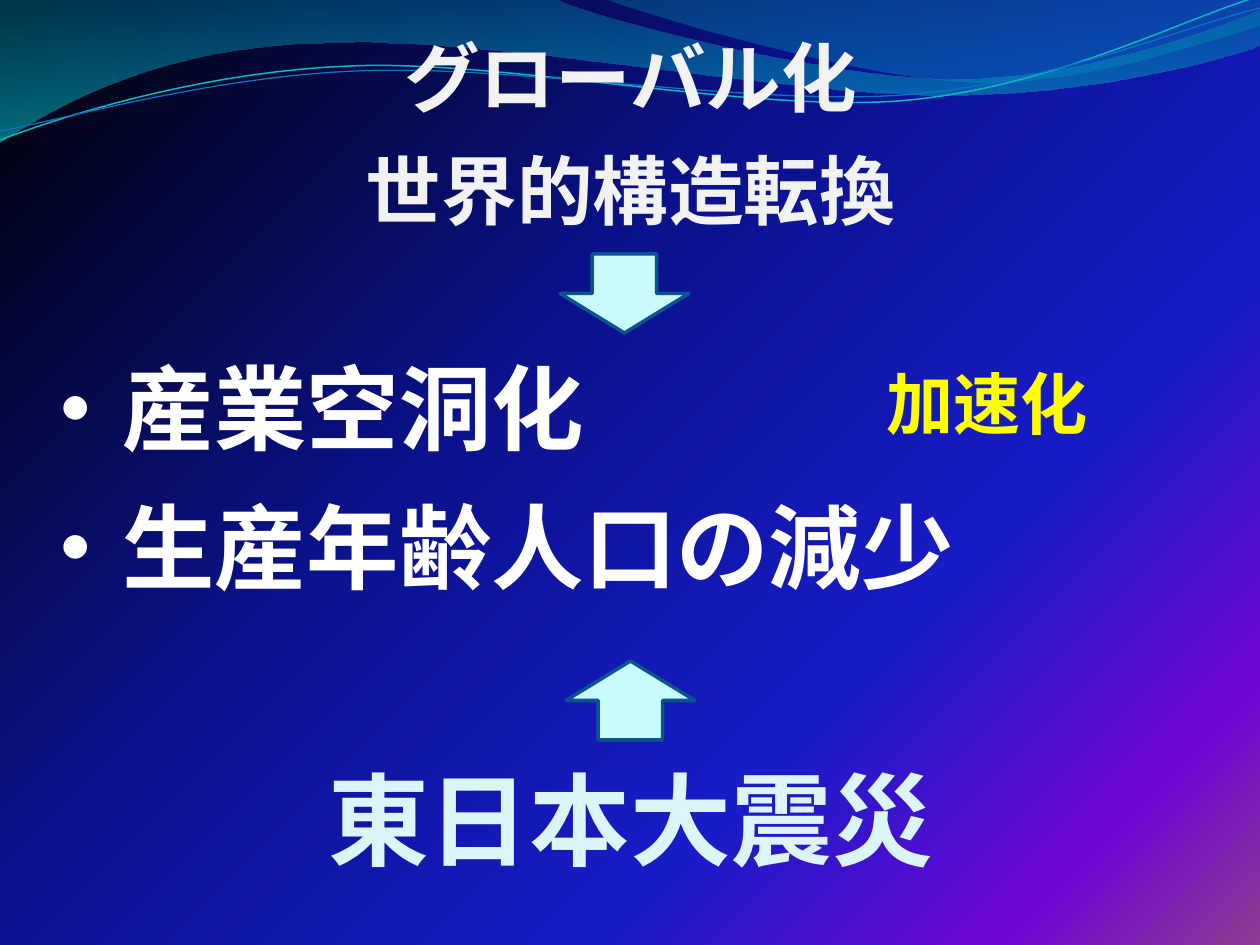
import dataclasses

import pptx
import pptx.dml.color
import pptx.enum.shapes
import pptx.enum.text
import pptx.oxml
import pptx.oxml.ns
import pptx.util
from lxml import etree

SHAPE = pptx.enum.shapes.MSO_SHAPE
ALIGN = pptx.enum.text.PP_ALIGN


@dataclasses.dataclass(frozen=True)
class Theme:
    font: str = "Noto Sans CJK JP"
    title: tuple = (54, "F2F2F2")
    body: tuple = (66, "FFFFFF")
    accent: tuple = (48, "FFFF00")
    footer: tuple = (72, "DBF5F9")
    arrow_fill: str = "C9FAFC"
    arrow_line: str = "0B5292"
    # Gradient stops: position %, colour, opacity %
    background: tuple = ((0, "000000", 100), (40, "0A128C", 100), (70, "181CC7", 100),
                         (88, "7005D4", 100), (100, "8C3D91", 100))
    wide_wave: tuple = ((0, "0074A1", 45), (100, "00C6CF", 55))
    right_wave: tuple = ((0, "00A1A9", 30), (80, "008BBF", 45))
    teal_line: str = "0AB8BF"
    blue_line: str = "0F6FC6"


def px(n):
    return round(n * 914400 / 126)


def rgb(value):
    return pptx.dml.color.RGBColor.from_string(value)


def set_gradient(fill, stops, angle):
    """Give a fill any number of stops, with opacity; the angle runs clockwise."""
    fill.gradient()
    fill.gradient_angle = (360 - angle) % 360
    gs_list = fill.gradient_stops._gsLst
    for gs in list(gs_list):
        gs_list.remove(gs)
    for pos, color, opacity in stops:
        gs = etree.SubElement(gs_list, pptx.oxml.ns.qn("a:gs"), pos=str(pos * 1000))
        clr = etree.SubElement(gs, pptx.oxml.ns.qn("a:srgbClr"), val=color)
        if opacity < 100:
            etree.SubElement(clr, pptx.oxml.ns.qn("a:alpha"), val=str(opacity * 1000))


def bend(sp, segments):
    """Join each run of three straight steps into one cubic curve."""
    steps = iter(list(sp._element.iter(pptx.oxml.ns.qn("a:lnTo"))))
    for seg in segments:
        first, *rest = [next(steps) for _ in seg]
        if rest:
            first.tag = pptx.oxml.ns.qn("a:cubicBezTo")
            for step in rest:
                first.append(step[0])
                step.getparent().remove(step)


class Deck:
    def __init__(self, theme):
        self.theme = theme
        self.prs = pptx.Presentation()
        self.prs.slide_width, self.prs.slide_height = px(1260), px(945)
        self.s = self.prs.slides.add_slide(self.prs.slide_layouts[1])
        set_gradient(self.s.background.fill, theme.background, 45)

    def wave(self, start, segments, stops=None, line=None, width=1):
        """Draw a filled band or an open line and keep it on the layout."""
        fb = self.s.shapes.build_freeform(*start, scale=px(100) / 100)
        fb.add_line_segments([pt for seg in segments for pt in seg],
                             close=stops is not None)
        sp = fb.convert_to_shape()
        bend(sp, segments)
        sp.shadow.inherit = False
        if stops:
            set_gradient(sp.fill, stops, 90)
            sp.line.fill.background()
        else:
            sp.fill.background()
            sp.line.color.rgb = rgb(line)
            sp.line.width = pptx.util.Pt(width)
        self.s.slide_layout.shapes._spTree.append(sp._element)

    def text(self, box, lines, style, align=ALIGN.CENTER, sp=None):
        """Fill a placeholder, or a new text box when none is given."""
        box = [px(n) for n in box]
        if sp is None:
            sp = self.s.shapes.add_textbox(*box)
        sp.left, sp.top, sp.width, sp.height = box
        tf = sp.text_frame
        tf.word_wrap = True
        tf.auto_size = pptx.enum.text.MSO_AUTO_SIZE.NONE
        tf.vertical_anchor = pptx.enum.text.MSO_ANCHOR.BOTTOM
        size, color = style
        for i, line in enumerate(lines):
            p = tf.add_paragraph() if i else tf.paragraphs[0]
            p.alignment = align
            p.space_before = pptx.util.Pt(0)
            pPr = p._p.get_or_add_pPr()
            pPr.set("marL", "0")
            pPr.set("indent", "0")
            etree.SubElement(pPr, pptx.oxml.ns.qn("a:buNone"))
            r = p.add_run()
            r.text = line
            r.font.name = self.theme.font
            r.font.size = pptx.util.Pt(size)
            r.font.bold = True
            r.font.color.rgb = rgb(color)
            rPr = r._r.get_or_add_rPr()
            rPr.set("cap", "small")
            etree.SubElement(rPr, pptx.oxml.ns.qn("a:ea"), typeface=self.theme.font)

    def arrow(self, left, top, flip=False):
        sp = self.s.shapes.add_shape(SHAPE.DOWN_ARROW, px(left), px(top), px(129), px(79))
        sp.shadow.inherit = False
        sp.fill.solid()
        sp.fill.fore_color.rgb = rgb(self.theme.arrow_fill)
        sp.line.color.rgb = rgb(self.theme.arrow_line)
        sp.line.width = pptx.util.Pt(2)
        if flip:
            sp._element.spPr.xfrm.set("flipV", "1")


def main():
    theme = Theme()
    deck = Deck(theme)
    title, body = deck.s.placeholders

    deck.wave((0, 0), [
        [(554, -1)],
        [(600, 21), (837, 79), (955, 79)],
        [(1075, 79), (1207, 33), (1260, 11)],
        [(1261, 45)],
        [(1239, 55), (1096, 96), (940, 95)],
        [(784, 95), (481, 35), (324, 43)],
        [(163, 45), (58, 105), (-1, 142)],
    ], stops=theme.wide_wave)
    deck.wave((604, -1), [
        [(641, 14), (859, 78), (969, 82)],
        [(1079, 87), (1211, 40), (1260, 26)],
        [(1260, 0)],
    ], stops=theme.right_wave)
    deck.wave((0, 140), [
        [(60, 117), (199, 72), (349, 66)],
        [(498, 59), (747, 112), (898, 101)],
        [(1050, 89), (1182, 19), (1257, -3)],
    ], line=theme.teal_line, width=0.85)
    deck.wave((0, 131), [
        [(59, 121), (207, 77), (357, 71)],
        [(508, 64), (752, 106), (903, 95)],
        [(1053, 84), (1185, 26), (1260, 8)],
    ], line=theme.blue_line, width=0.75)

    deck.text((30, 741, 1201, 149), ["東日本大震災"], theme.footer)
    deck.text((25, 76, 1211, 169), ["グローバル化", "世界的構造転換"], theme.title, sp=title)
    deck.text((17, 334, 1226, 278), ["・産業空洞化", "・生産年齢人口の減少"],
              theme.body, ALIGN.LEFT, sp=body)
    deck.arrow(560, 254)
    deck.arrow(566, 661, flip=True)
    deck.text((749, 364, 476, 89), ["加速化"], theme.accent)

    deck.prs.save("out.pptx")


if __name__ == "__main__":
    main()
